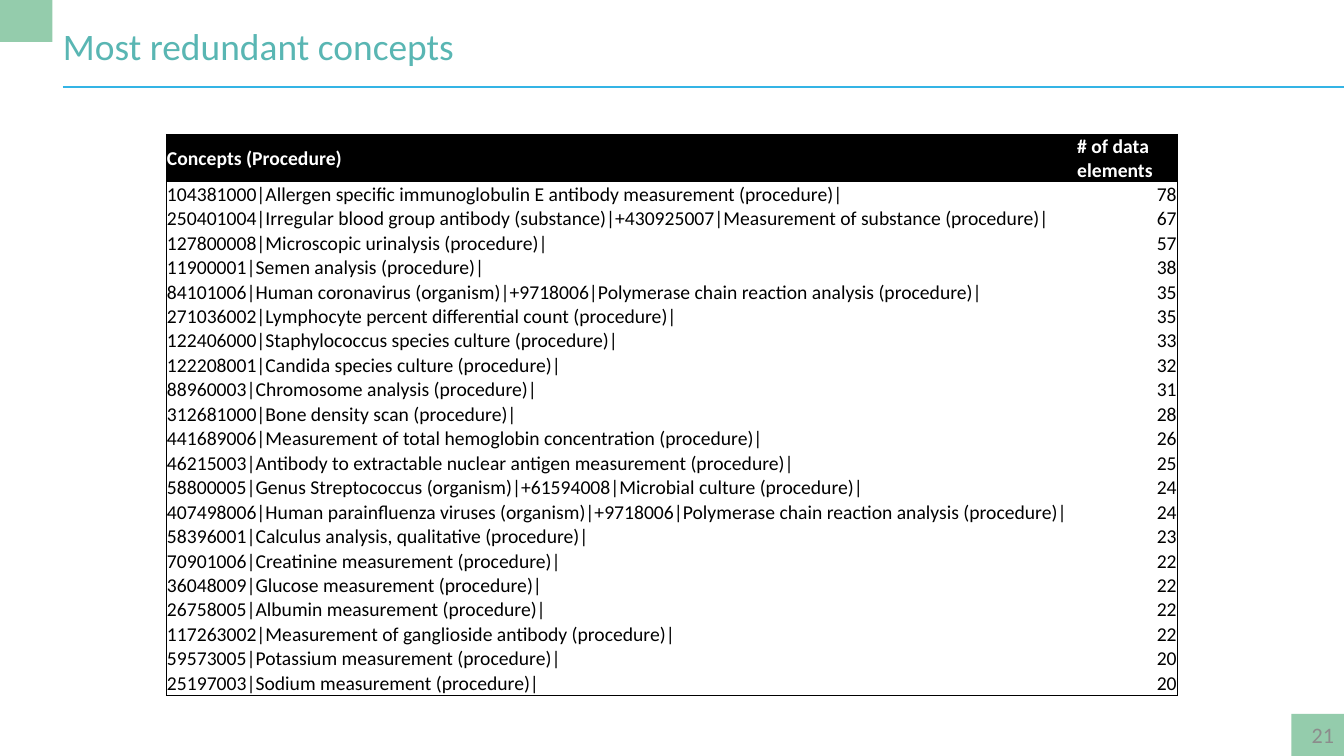
from dataclasses import dataclass
from lxml.etree import SubElement
from pptx import Presentation
from pptx.dml.color import RGBColor
from pptx.enum.shapes import MSO_CONNECTOR, MSO_SHAPE
from pptx.enum.text import MSO_ANCHOR, PP_ALIGN
from pptx.oxml.ns import qn
from pptx.util import Pt

LEFT, RIGHT = PP_ALIGN.LEFT, PP_ALIGN.RIGHT
TOP, MIDDLE, BOTTOM = MSO_ANCHOR.TOP, MSO_ANCHOR.MIDDLE, MSO_ANCHOR.BOTTOM


@dataclass
class Theme:
    font: str = "Calibri"
    green: str = "94CCAC"
    teal: str = "59B6B3"
    blue: str = "34B4E5"
    gray: str = "8C8C8C"
    black: str = "000000"
    white: str = "FFFFFF"
    title_size: float = 26.7
    table_size: float = 14
    number_size: float = 15.8


theme = Theme()


def write(holder, text, size, color, bold=False, align=LEFT):
    para = holder.text_frame.paragraphs[0]
    para.text = text
    para.alignment = align
    for span in para.runs:
        span.font.name = theme.font
        span.font.size = Pt(size)
        span.font.bold = bold
        span.font.color.rgb = RGBColor.from_string(color)
    for line_break in para._p.findall(qn("a:br")):
        SubElement(line_break, qn("a:rPr"), sz=str(round(size * 100)))


def add_borders(cell, sides):
    properties = cell._tc.get_or_add_tcPr()
    for side in "LRTB":
        line = SubElement(properties, qn("a:ln" + side), w=str(Pt(0.75)))
        if side in sides:
            fill = SubElement(line, qn("a:solidFill"))
            SubElement(fill, qn("a:srgbClr"), val=theme.black)
        else:
            SubElement(line, qn("a:noFill"))


deck = Presentation()
deck.slide_width, deck.slide_height = Pt(960), Pt(540)
page = deck.slides.add_slide(deck.slide_layouts[6])

corner_width, corner_height = 37.5, 30
for left, top in [(960 - corner_width, 540 - corner_height), (0, 0)]:
    corner = page.shapes.add_shape(
        MSO_SHAPE.RECTANGLE, Pt(left), Pt(top), Pt(corner_width), Pt(corner_height))
    corner.shadow.inherit = False
    corner.fill.solid()
    corner.fill.fore_color.rgb = RGBColor.from_string(theme.green)
    corner.line.fill.background()

rule = page.shapes.add_connector(MSO_CONNECTOR.STRAIGHT, Pt(45), Pt(62.3), Pt(960), Pt(62.3))
rule.line.color.rgb = RGBColor.from_string(theme.blue)
rule.line.width = Pt(1.42)
SubElement(rule._element.spPr, qn("a:effectLst"))

title = page.shapes.add_textbox(Pt(45), Pt(16.6), Pt(850), Pt(32.4))
title.text_frame.word_wrap = True
title.text_frame.vertical_anchor = TOP
title.text_frame.margin_left = title.text_frame.margin_right = 0
title.text_frame.margin_top = title.text_frame.margin_bottom = 0
write(title, "Most redundant concepts", theme.title_size, theme.teal)

number = page.shapes.add_textbox(Pt(860.4), Pt(510.5), Pt(99.6), Pt(28.8))
number.text_frame.word_wrap = True
number.text_frame.vertical_anchor = MIDDLE
write(number, "21", theme.number_size, theme.gray, align=RIGHT)

rows = [
    ("Concepts (Procedure)", "# of data\nelements"),
    ("104381000|Allergen specific immunoglobulin E antibody measurement (procedure)|", "78"),
    ("250401004|Irregular blood group antibody (substance)|+430925007|Measurement of substance (procedure)|", "67"),
    ("127800008|Microscopic urinalysis (procedure)|", "57"),
    ("11900001|Semen analysis (procedure)|", "38"),
    ("84101006|Human coronavirus (organism)|+9718006|Polymerase chain reaction analysis (procedure)|", "35"),
    ("271036002|Lymphocyte percent differential count (procedure)|", "35"),
    ("122406000|Staphylococcus species culture (procedure)|", "33"),
    ("122208001|Candida species culture (procedure)|", "32"),
    ("88960003|Chromosome analysis (procedure)|", "31"),
    ("312681000|Bone density scan (procedure)|", "28"),
    ("441689006|Measurement of total hemoglobin concentration (procedure)|", "26"),
    ("46215003|Antibody to extractable nuclear antigen measurement (procedure)|", "25"),
    ("58800005|Genus Streptococcus (organism)|+61594008|Microbial culture (procedure)|", "24"),
    ("407498006|Human parainfluenza viruses (organism)|+9718006|Polymerase chain reaction analysis (procedure)|", "24"),
    ("58396001|Calculus analysis, qualitative (procedure)|", "23"),
    ("70901006|Creatinine measurement (procedure)|", "22"),
    ("36048009|Glucose measurement (procedure)|", "22"),
    ("26758005|Albumin measurement (procedure)|", "22"),
    ("117263002|Measurement of ganglioside antibody (procedure)|", "22"),
    ("59573005|Potassium measurement (procedure)|", "20"),
    ("25197003|Sodium measurement (procedure)|", "20"),
]
header_height, row_height = 34, 17.48
table_height = header_height + row_height * (len(rows) - 1)
table = page.shapes.add_table(
    len(rows), 2, Pt(118.8), Pt(96), Pt(722.2), Pt(table_height)).table
table.horz_banding = False
table.columns[0].width, table.columns[1].width = Pt(650.2), Pt(72)

for row, texts in enumerate(rows):
    header = row == 0
    table.rows[row].height = Pt(header_height if header else row_height)
    edge = "T" if header else "B" if row == len(rows) - 1 else ""
    for column, text in enumerate(texts):
        cell = table.cell(row, column)
        cell.margin_left = cell.margin_right = Pt(0.5)
        cell.margin_top, cell.margin_bottom = Pt(0.4), 0
        cell.vertical_anchor = MIDDLE if header else BOTTOM
        add_borders(cell, "LR"[column] + edge)
        cell.fill.solid()
        cell.fill.fore_color.rgb = RGBColor.from_string(theme.black if header else theme.white)
        write(cell, text, theme.table_size, theme.white if header else theme.black,
              bold=header, align=RIGHT if column and not header else LEFT)

deck.save("out.pptx")
